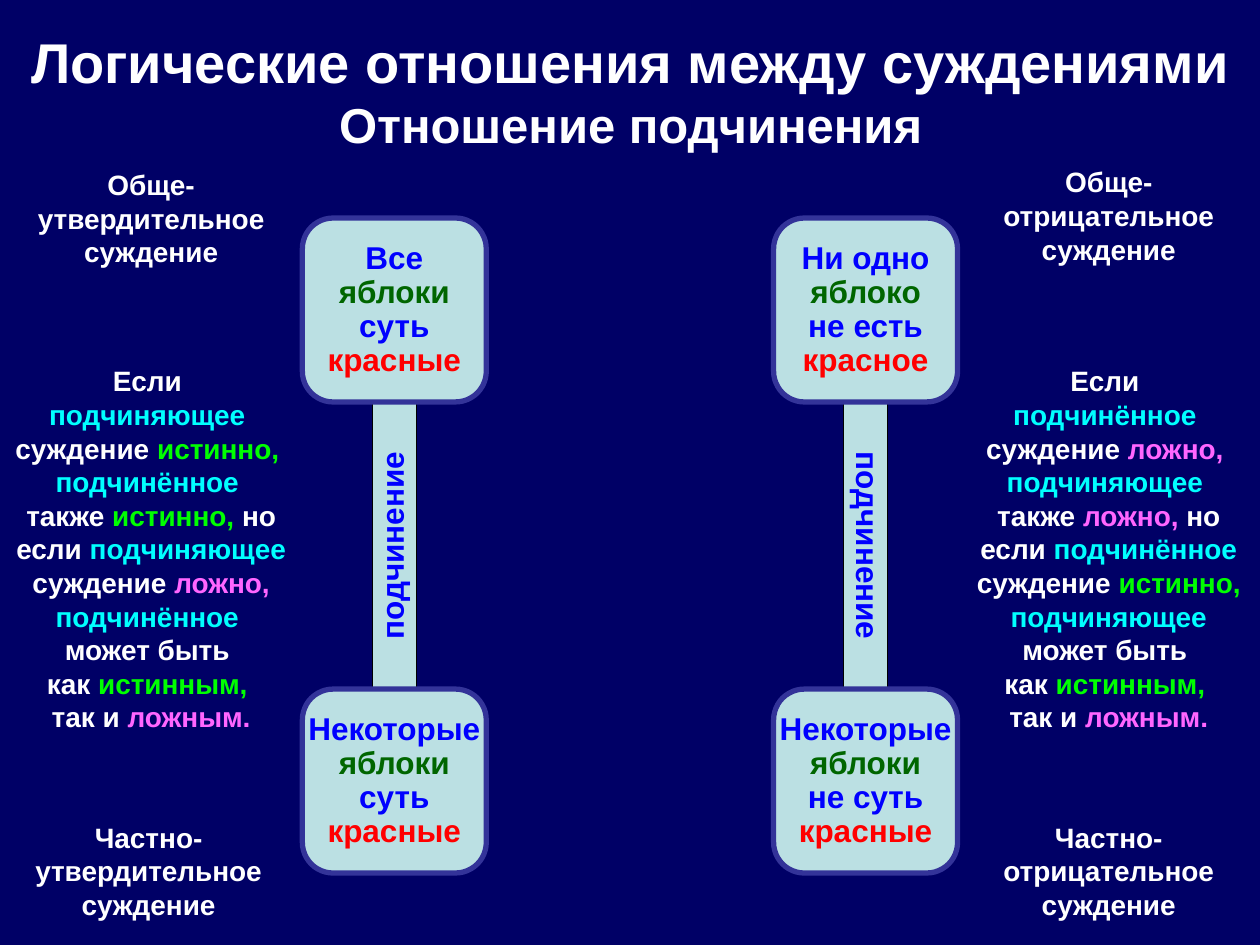
from pptx import Presentation
from pptx.dml import color
from pptx.enum import shapes, text
from pptx.util import Pt

WHITE, BLUE, GREEN, RED = "FFFFFF", "0000FF", "006600", "FF0000"
CYAN, LIME, PINK = "00FFFF", "00FF00", "FF66FF"
PALE, EDGE, NAVY = "BBE0E3", "333399", "000066"
COL, SIDE, TOP, LOW = 172.8, 105.1, 124.6, 393.8


def paint(item, tint):
    """Give a fill a solid colour."""
    item.solid()
    item.fore_color.rgb = color.RGBColor.from_string(tint)


def write(shape, parts, size=16, mid=False, wrap=False, gap=None, top=3.6):
    """Write (text, colour[, size]) parts as one centred bold paragraph."""
    frame = shape.text_frame
    frame.word_wrap = wrap
    frame.margin_top = Pt(top)
    anchor = text.MSO_ANCHOR
    frame.vertical_anchor = anchor.MIDDLE if mid else anchor.TOP
    para = frame.paragraphs[0]
    para.alignment = text.PP_ALIGN.CENTER
    if gap:
        para.line_spacing = gap
    for words, tint, *own in parts:
        for i, line in enumerate(words.split("\n")):
            if i:
                para.add_line_break()
            if line:
                run = para.add_run()
                run.text = line
                font = run.font
                font.name, font.bold = "Arial", True
                font.size = Pt(own[0] if own else size)
                font.color.rgb = color.RGBColor.from_string(tint)


def note(slide, box, parts, **look):
    """Add a text box."""
    write(slide.shapes.add_textbox(*map(Pt, box)), parts, **look)


def block(slide, kind, box, line, width):
    """Add a pale outlined shape."""
    shape = slide.shapes.add_shape(kind, *map(Pt, box))
    shape.shadow.inherit = False
    paint(shape.fill, PALE)
    paint(shape.line.fill, line)
    shape.line.width = Pt(width)
    return shape


def pair(slide, x, turn, upper, lower):
    """Draw two judgements joined by a turned bar."""
    kinds = shapes.MSO_SHAPE
    wide, high = 198.7, 25.2
    mid = (TOP + LOW + SIDE) / 2
    box = x + (SIDE - wide) / 2, mid - high / 2, wide, high
    bar = block(slide, kinds.RECTANGLE, box, "000000", 0.75)
    bar.rotation = turn
    write(bar, [("подчинение", BLUE)], size=18, mid=True, top=0)
    for y, lines in ((TOP, upper), (LOW, lower)):
        card = block(slide, kinds.ROUNDED_RECTANGLE, (x, y, SIDE, SIDE), EDGE, 3)
        card.adjustments[0] = 0.167
        ends = "\n", "\n", "\n", ""
        tints = BLUE, GREEN, BLUE, RED
        parts = [(a + b, c) for a, b, c in zip(lines, ends, tints)]
        write(card, parts, size=18, mid=True, gap=0.9)


def rule(slide, x, first, second, yes, no, end):
    """Explain how truth passes between the judgements."""
    (good, shine), (bad, glow) = yes, no
    parts = [
        ("Если \n", WHITE), (first + " \n", CYAN),
        ("суждение ", WHITE), (good + ", \n", shine),
        (second + " \n", CYAN),
        ("также ", WHITE), (good + ",", shine), (" но если ", WHITE),
        (first, CYAN), (" суждение ", WHITE), (bad + ", ", glow),
        (second + end, CYAN), ("может быть \nкак ", WHITE),
        ("истинным, \n", LIME), ("так и ", WHITE), ("ложным.", PINK),
    ]
    note(slide, (x, 201.6, COL, 223.9), parts, mid=True, wrap=True)


def label(slide, x, y, wide, kind, sort, mid=False):
    """Name one kind of judgement."""
    words = f"{kind}-\n{sort}\nсуждение"
    note(slide, (x, y, wide, 67.7), [(words, WHITE)], mid=mid)


def head(slide):
    """Write the title."""
    parts = [("Логические отношения между суждениями\n", WHITE, 32),
             ("Отношение подчинения", WHITE, 28)]
    note(slide, (7.9, 8.6, 704.9, 73.4), parts, wrap=True, top=7)


def main():
    """Build the slide."""
    deck = Presentation()
    deck.slide_width, deck.slide_height = Pt(720), Pt(540)
    slide = deck.slides.add_slide(deck.slide_layouts[6])
    paint(slide.background.fill, NAVY)
    far = 720 - COL
    head(slide)
    pair(slide, COL, 270, ("Все", "яблоки", "суть", "красные"),
         ("Некоторые", "яблоки", "суть", "красные"))
    pair(slide, far - SIDE, 90, ("Ни одно", "яблоко", "не есть", "красное"),
         ("Некоторые", "яблоки", "не суть", "красные"))
    label(slide, 0, 90.7, COL, "Обще", "утвердительное", mid=True)
    label(slide, far, 90.7, COL, "Обще", "отрицательное")
    label(slide, 0, 465.1, 169.9, "Частно", "утвердительное")
    label(slide, far, 465.1, COL, "Частно", "отрицательное")
    true, false = ("истинно", LIME), ("ложно", PINK)
    over, under = "подчиняющее", "подчинённое"
    rule(slide, 0, over, under, true, false, " \n")
    rule(slide, far, under, over, false, true, " ")
    deck.save("out.pptx")


if __name__ == "__main__":
    main()
